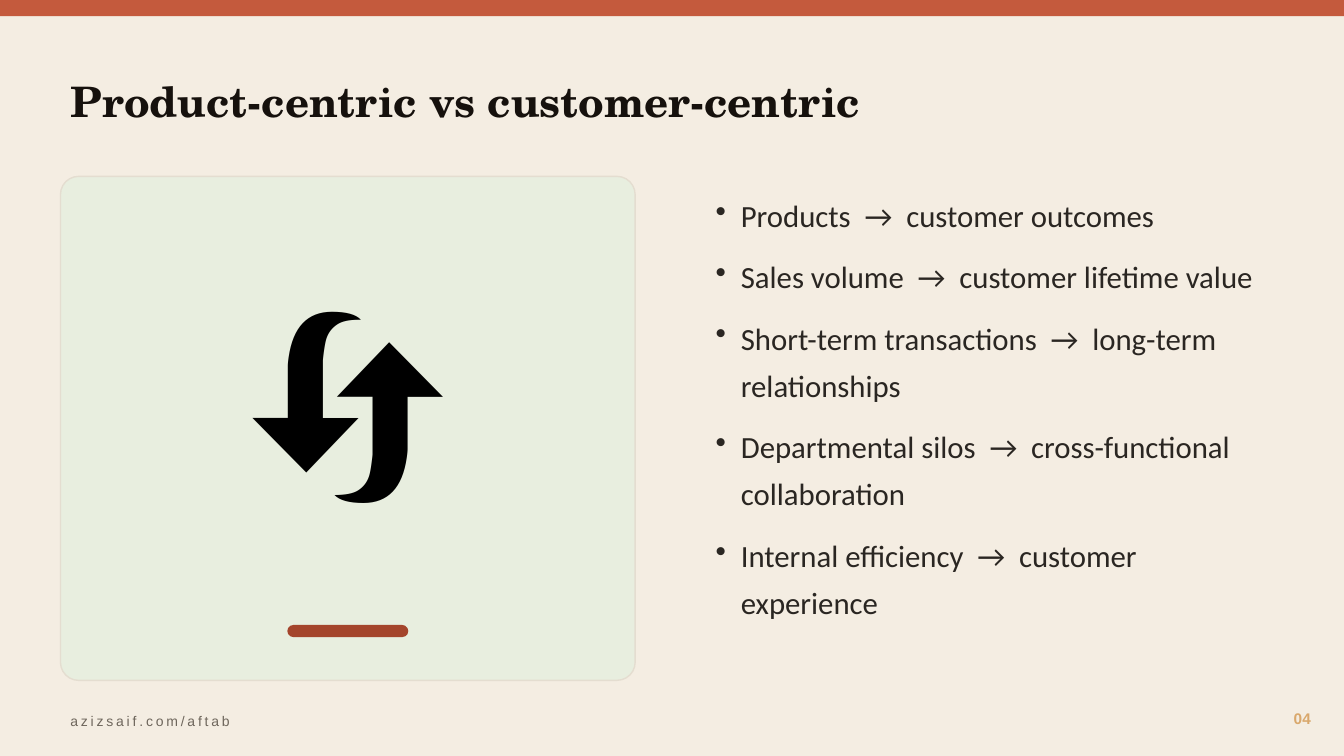
from pptx import Presentation
from pptx import util as u
from pptx.dml.color import RGBColor
from pptx.enum import shapes, text
from lxml import etree

TITLE = "Product-centric vs customer-centric"
ICON = "🔄"
SHIFTS = [
    ("Products", "customer outcomes"),
    ("Sales volume", "customer lifetime value"),
    ("Short-term transactions", "long-term relationships"),
    ("Departmental silos", "cross-functional collaboration"),
    ("Internal efficiency", "customer experience"),
]
PAGE = "04"
SITE = "azizsaif.com/aftab"

WIDE, HIGH = 13.33, 7.5
EDGE = 0.6
CARD = (EDGE, 1.75, 5.7, 5)
BAR = (1.2, 0.12)
RECT = shapes.MSO_SHAPE.RECTANGLE
ROUND = shapes.MSO_SHAPE.ROUNDED_RECTANGLE
LEFT, MID, RIGHT = text.PP_ALIGN.LEFT, text.PP_ALIGN.CENTER, text.PP_ALIGN.RIGHT
NS = "{http://schemas.openxmlformats.org/drawingml/2006/main}"


def tint(code):
    return RGBColor.from_string(code)


def block(slide, kind, area, fill, line=None, bend=None):
    item = slide.shapes.add_shape(kind, *map(u.Inches, area))
    item.shadow.inherit = False
    item.fill.solid()
    item.fill.fore_color.rgb = tint(fill)
    if line:
        item.line.color.rgb = tint(line)
        item.line.width = u.Pt(1)
    else:
        item.line.fill.background()
    if bend is not None:
        item.adjustments[0] = bend


def write(slide, area, lines, size, face, color, bold=False, align=LEFT,
          anchor=text.MSO_ANCHOR.MIDDLE, bullet=False, track=0):
    frame = slide.shapes.add_textbox(*map(u.Inches, area)).text_frame
    frame.word_wrap = True
    frame.vertical_anchor = anchor
    for row, line in enumerate(lines):
        para = frame.add_paragraph() if row else frame.paragraphs[0]
        run = para.add_run()
        run.text = line
        para.alignment = align
        if bullet:
            props = para._p.get_or_add_pPr()
            props.set("marL", str(u.Inches(0.25)))
            props.set("indent", str(-u.Inches(0.25)))
            etree.SubElement(props, NS + "buChar").set("char", "•")
            para.line_spacing = 1.28
            para.space_after = u.Pt(10)
        if track:
            run._r.get_or_add_rPr().set("spc", str(track * 100))
        font = para.font
        font.size = u.Pt(size)
        font.name = face
        font.bold = bold
        font.color.rgb = tint(color)


def main():
    deck = Presentation()
    deck.slide_width, deck.slide_height = u.Inches(WIDE), u.Inches(HIGH)
    slide = deck.slides.add_slide(deck.slide_layouts[6])
    slide.background.fill.solid()
    slide.background.fill.fore_color.rgb = tint("F4EDE2")

    block(slide, RECT, (0, 0, WIDE, 0.16), "C45A3D")
    write(slide, (EDGE, 0.5, 12.1, 1), [TITLE], 30, "TeX Gyre Schola", "16110D", bold=True)

    left, top, wide, high = CARD
    block(slide, ROUND, CARD, "E8EEDF", "E4DDD0", 0.036)
    write(slide, (left, top, wide, 4.1), [ICON], 150, "Calibri", "000000", align=MID)
    block(slide, ROUND, (left + (wide - BAR[0]) / 2, 6.2, *BAR), "A4452C", bend=0.5)

    write(slide, (7, 1.8, wide, high), ["  →  ".join(pair) for pair in SHIFTS],
          22, "Calibri", "2A2622", anchor=text.MSO_ANCHOR.TOP, bullet=True)

    write(slide, (12.2, 6.95, 0.9, 0.35), [PAGE], 11, "Arial", "D9A86C", bold=True, align=RIGHT)
    write(slide, (EDGE, 7, 8, 0.3), [SITE], 10, "Arial", "6E665C", track=2)
    deck.save("out.pptx")


if __name__ == "__main__":
    main()
